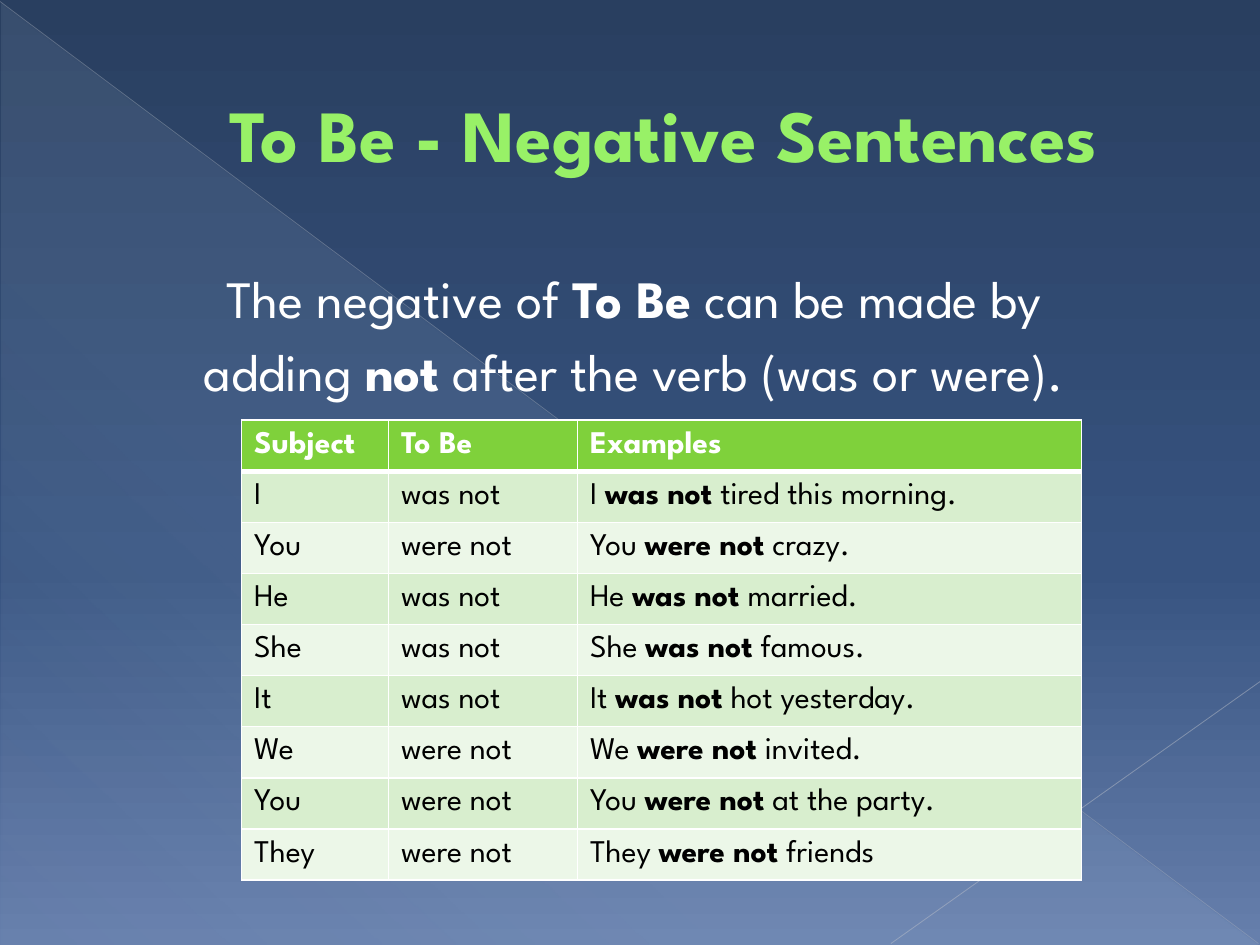
from lxml import etree
from pptx import Presentation
from pptx import util as u
from pptx.dml.color import RGBColor
from pptx.enum import shapes, text
from pptx.oxml.ns import qn

TITLE = "To Be - Negative Sentences"
# Asterisks enclose bold words.
RULE = [
    "The negative of *To Be* can be made by",
    "adding *not* after the verb (was or were).",
]
HEADINGS = ("Subject", "To Be", "Examples")
SENTENCES = [
    ("I", "was not", "tired this morning."),
    ("You", "were not", "crazy."),
    ("He", "was not", "married."),
    ("She", "was not", "famous."),
    ("It", "was not", "hot yesterday."),
    ("We", "were not", "invited."),
    ("You", "were not", "at the party."),
    ("They", "were not", "friends"),
]
COLUMN_WIDTHS = (2.96, 3.81, 10.16)
ROW_HEIGHT = 1.03

THEME = {
    "font": "League Spartan",
    "title_size": 42, "rule_size": 30, "table_size": 18,
    "title": "98F167", "title_outline": "589129",
    "light": "FFFFFF", "dark": "000000",
    "header": "7FD13B", "bands": ("D8EECE", "ECF7E8"),
    # Gradient stops: position, colour, opacity (all in percent)
    "background": [(0, "293F60", 100), (60, "375380", 100), (100, "667FAC", 100)],
    "glow": [(0, "D6ECFF", 10), (70, "D6ECFF", 8), (100, "D6ECFF", 1)],
}
# Start x, y, end x, y in cm; colour, width in points, opacity in percent
RAYS = [
    ((0, 0.03, 25.37, 19.02), "B7BCC5", 0.39, 35),
    ((25.4, 13.74, 17.96, 19.02), "BFC3CB", 0.47, 45),
]


def sub(parent, tag, **attributes):
    return etree.SubElement(parent, qn(tag), {k: str(v) for k, v in attributes.items()})


def add_color(parent, color, opacity=100):
    value = sub(parent, "a:srgbClr", val=color)
    if opacity < 100:
        sub(value, "a:alpha", val=opacity * 1000)


def make_gradient(solid, stops, angle):
    """Replace a solid fill element by a linear gradient."""
    gradient = etree.Element(qn("a:gradFill"), rotWithShape="1")
    stop_list = sub(gradient, "a:gsLst")
    for position, color, opacity in stops:
        add_color(sub(stop_list, "a:gs", pos=position * 1000), color, opacity)
    sub(gradient, "a:lin", ang=angle * 60000, scaled=0)
    solid.getparent().replace(solid, gradient)


def write(paragraph, content, size, color, bold=False, align=None, before=None,
          margin=0, indent=0, outline=None):
    """Fill a paragraph; words between asterisks become bold."""
    paragraph.alignment = align
    if before is not None:
        paragraph.space_before = u.Pt(before)
    if margin:
        properties = paragraph._p.get_or_add_pPr()
        properties.set("marL", str(u.Cm(margin)))
        properties.set("indent", str(u.Cm(indent)))
    for index, part in enumerate(content.split("*")):
        if not part:
            continue
        run = paragraph.add_run()
        run.text = part
        run.font.name = THEME["font"]
        run.font.size = u.Pt(size)
        run.font.bold = bold or index % 2 == 1
        run.font.color.rgb = RGBColor.from_string(color)
        if outline:
            edge = etree.Element(qn("a:ln"), w=str(u.Pt(0.5)))
            add_color(sub(edge, "a:solidFill"), outline)
            run._r.get_or_add_rPr().insert(0, edge)


def add_backdrop(slide):
    slide.background.fill.solid()
    make_gradient(slide._element.find(".//" + qn("a:solidFill")), THEME["background"], 90)

    glow = slide.shapes.add_shape(shapes.MSO_SHAPE.RIGHT_TRIANGLE,
                                  u.Cm(0.03), u.Cm(0.05), u.Cm(25.35), u.Cm(19))
    glow.shadow.inherit = False
    glow.line.fill.background()
    glow.fill.solid()
    make_gradient(glow._element.spPr.find(qn("a:solidFill")), THEME["glow"], 133)

    for ends, color, width, opacity in RAYS:
        ray = slide.shapes.add_connector(shapes.MSO_CONNECTOR.STRAIGHT, *map(u.Cm, ends))
        ray.line.width = u.Pt(width)
        ray.line.color.rgb = RGBColor.from_string(color)
        tint = ray._element.spPr.find(".//" + qn("a:srgbClr"))
        sub(tint, "a:alpha", val=opacity * 1000)
        sub(ray._element.spPr, "a:effectLst")


def add_title(slide):
    title = slide.shapes.title
    slide.shapes._spTree.append(title._element)  # in front of the backdrop
    title.left, title.top, title.width, title.height = map(u.Cm, (1.27, 0.74, 22.86, 3.89))
    frame = title.text_frame
    frame.auto_size = text.MSO_AUTO_SIZE.NONE
    frame.vertical_anchor = text.MSO_ANCHOR.MIDDLE
    write(frame.paragraphs[0], TITLE, THEME["title_size"], THEME["title"], bold=True,
          align=text.PP_ALIGN.CENTER, margin=1.35, outline=THEME["title_outline"])


def add_rule(slide):
    frame = slide.shapes.add_textbox(*map(u.Cm, (1.27, 5.23, 22.86, 12.7))).text_frame
    frame.word_wrap = True
    for index, line in enumerate(RULE):
        paragraph = frame.add_paragraph() if index else frame.paragraphs[0]
        write(paragraph, line, THEME["rule_size"], THEME["light"], before=6,
              align=text.PP_ALIGN.CENTER, margin=1.24, indent=-1.07)


def style_cell(cell, fill, bottom):
    properties = cell._tc.get_or_add_tcPr()
    for side, width in (("L", 1), ("R", 1), ("T", 1), ("B", bottom)):
        border = sub(properties, "a:ln" + side, w=u.Pt(width))
        add_color(sub(border, "a:solidFill"), THEME["light"])
    cell.fill.solid()
    cell.fill.fore_color.rgb = RGBColor.from_string(fill)
    cell.vertical_anchor = text.MSO_ANCHOR.MIDDLE


def add_sentences(slide):
    rows = [HEADINGS] + [(subject, verb, f"{subject} *{verb}* {rest}")
                         for subject, verb, rest in SENTENCES]
    table = slide.shapes.add_table(
        len(rows), len(HEADINGS), u.Cm(4.87), u.Cm(8.47),
        u.Cm(sum(COLUMN_WIDTHS)), u.Cm(ROW_HEIGHT * len(rows))).table
    for column, width in zip(table.columns, COLUMN_WIDTHS):
        column.width = u.Cm(width)
    for r, row in enumerate(rows):
        header = r == 0
        table.rows[r].height = u.Cm(ROW_HEIGHT)
        for c, content in enumerate(row):
            cell = table.cell(r, c)
            style_cell(cell, THEME["header"] if header else THEME["bands"][(r - 1) % 2],
                       bottom=3 if header else 1)
            if r == 1:
                cell._tc.tcPr.find(qn("a:lnT")).set("w", str(u.Pt(3)))
            write(cell.text_frame.paragraphs[0], content, THEME["table_size"],
                  THEME["light"] if header else THEME["dark"], bold=header)


def main():
    deck = Presentation()
    deck.slide_width, deck.slide_height = u.Cm(25.4), u.Cm(19.05)
    slide = deck.slides.add_slide(deck.slide_layouts[5])
    add_backdrop(slide)
    add_title(slide)
    add_rule(slide)
    add_sentences(slide)
    deck.save("out.pptx")


if __name__ == "__main__":
    main()
